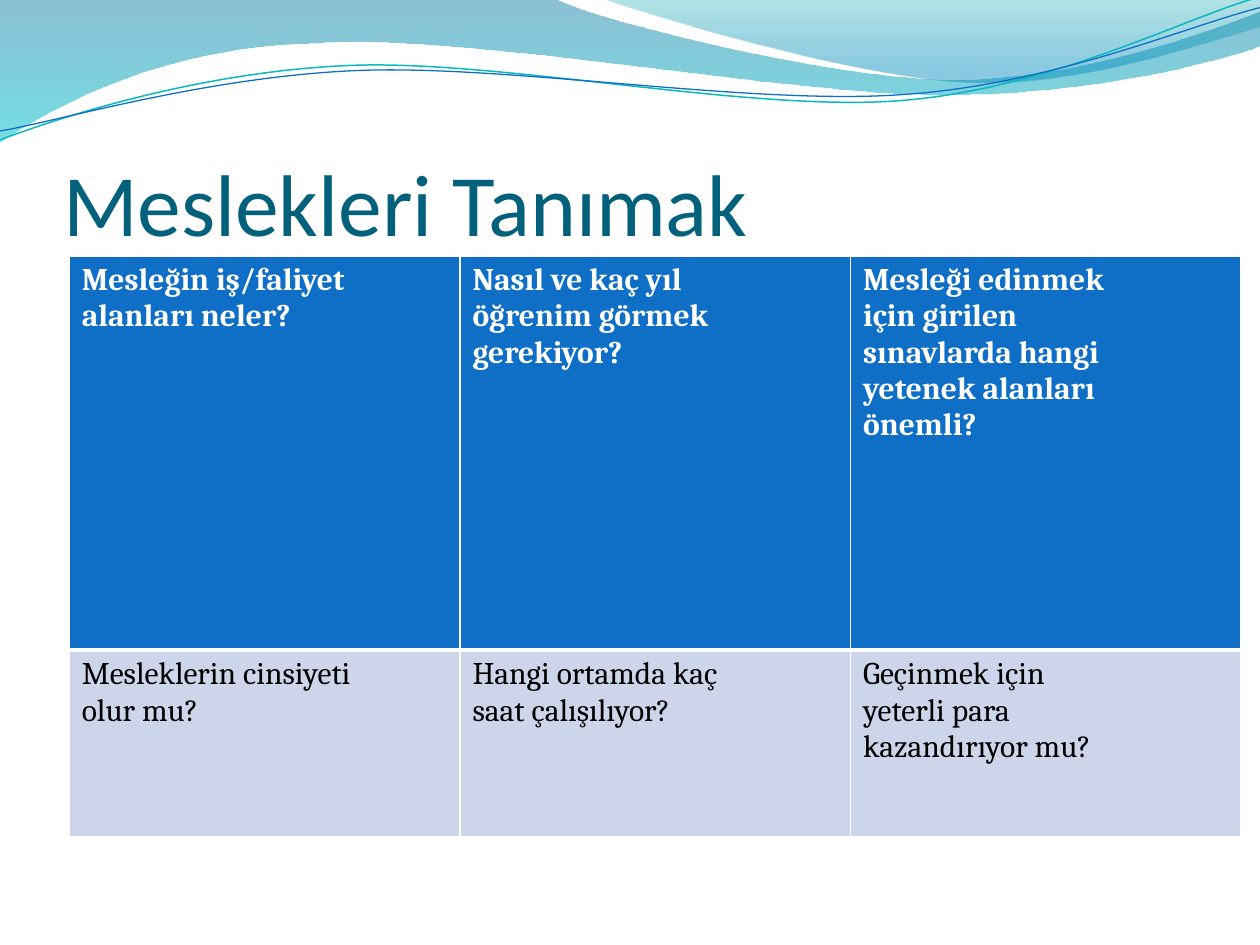
import math

from lxml import etree
from pptx import Presentation, util as u
from pptx.dml.color import RGBColor
from pptx.enum import text
from pptx.oxml import ns

COLORS = {
    "title": "04617B", "header": "0F6FC6", "body": "CCD5EA",
    "white": "FFFFFF", "black": "000000", "teal": "0AB8BF", "blue": "0F6FC6",
    "deep": "0074A1", "cyan": "00C6CF", "green": "00A1A9", "sky": "008BBF",
}
TILT = -2.7
BANDS = [
    ([(0, 0), (4.4, -0.01),
      (4.76, 0.17, 6.64, 0.63, 7.58, 0.63), (8.53, 0.63, 9.58, 0.26, 10, 0.09),
      (10.01, 0.36),
      (9.83, 0.44, 8.7, 0.76, 7.46, 0.75), (6.22, 0.75, 3.82, 0.28, 2.57, 0.34),
      (1.29, 0.36, 0.46, 0.83, -0.01, 1.13), (0, 0)],
     [(0, "deep", 45), (1, "cyan", 55)]),
    ([(4.79, -0.01),
      (5.09, 0.11, 6.82, 0.62, 7.69, 0.65), (8.56, 0.69, 9.61, 0.32, 10, 0.21),
      (10, 0), (4.79, -0.01)],
     [(0, "green", 30), (0.8, "sky", 45)]),
]
STRANDS = [
    ([(0, 1.11), (0.48, 0.93, 1.58, 0.57, 2.77, 0.52),
      (3.95, 0.47, 5.93, 0.89, 7.13, 0.8), (8.33, 0.71, 9.38, 0.15, 9.98, -0.02)],
     "teal", 0.85),
    ([(0, 1.04), (0.47, 0.96, 1.64, 0.61, 2.83, 0.56),
      (4.03, 0.51, 5.97, 0.84, 7.17, 0.75), (8.36, 0.67, 9.41, 0.21, 10, 0.06)],
     "blue", 0.75),
]
QUESTIONS = [
    ["Mesleğin iş/faliyet\nalanları neler?",
     "Nasıl ve kaç yıl\nöğrenim görmek\ngerekiyor?",
     "Mesleği edinmek\niçin girilen\nsınavlarda hangi\nyetenek alanları\nönemli?"],
    ["Mesleklerin cinsiyeti\nolur mu?",
     "Hangi ortamda kaç\nsaat çalışılıyor?",
     "Geçinmek için\nyeterli para\nkazandırıyor mu?"],
]


def rgb(name):
    """Return the named colour."""
    return RGBColor.from_string(COLORS[name])


def apply(obj, values):
    """Set each attribute of obj from a dict."""
    for name, value in values.items():
        setattr(obj, name, value)


def turn(x, y, degrees, center=(4.99, 0.58)):
    """Turn a point clockwise about the center of the strands."""
    a, dx, dy = math.radians(degrees), x - center[0], y - center[1]
    return (center[0] + dx * math.cos(a) - dy * math.sin(a),
            center[1] + dx * math.sin(a) + dy * math.cos(a))


def add_outline(s, left, top, segments, close=False, tilt=0):
    """Draw a freeform of lines and cubic curves, tilted by some degrees."""
    curves = []
    for seg in segments:
        points = [turn(x, y, -tilt) for x, y in zip(seg[::2], seg[1::2])]
        curves.append([(left + u.Inches(x), top + u.Inches(y)) for x, y in points])
    builder = s.shapes.build_freeform(*curves[0][-1])
    builder.add_line_segments([points[-1] for points in curves[1:]], close=close)
    sp = builder.convert_to_shape()
    for line, points in zip(list(sp._element.iter(ns.qn("a:lnTo"))), curves[1:]):
        if len(points) == 3:
            line.tag = ns.qn("a:cubicBezTo")
            for i, (x, y) in enumerate(points[:2]):
                pt = etree.Element(ns.qn("a:pt"), x=str(x - sp.left), y=str(y - sp.top))
                line.insert(i, pt)
    sp.rotation = tilt
    sp.shadow.inherit = False
    return sp


def add_waves(s, left, top):
    """Draw the gradient bands and thin strands along the top."""
    for segments, stops in BANDS:
        sp = add_outline(s, left, top, segments, close=True)
        sp.line.fill.background()
        sp.fill.gradient()
        sp.fill.gradient_angle = 270
        for stop, (position, color, _) in zip(sp.fill.gradient_stops, stops):
            stop.position = position
            stop.color.rgb = rgb(color)
        clrs = sp._element.spPr.iter(ns.qn("a:srgbClr"))
        for clr, (_, _, opacity) in zip(clrs, stops):
            etree.SubElement(clr, ns.qn("a:alpha"), val=str(opacity * 1000))
    for segments, color, width in STRANDS:
        sp = add_outline(s, left, top, segments, tilt=TILT)
        sp.fill.background()
        sp.line.color.rgb = rgb(color)
        sp.line.width = u.Pt(width)


def add_title(s, left, top, width, height):
    """Place and format the title placeholder."""
    sp = s.shapes.title
    apply(sp, {"left": left, "top": top, "width": width, "height": height})
    tf = sp.text_frame
    tf.text = "Meslekleri Tanımak"
    apply(tf, {"auto_size": text.MSO_AUTO_SIZE.NONE, "word_wrap": True,
               "vertical_anchor": text.MSO_ANCHOR.BOTTOM, "margin_left": 0,
               "margin_right": 0, "margin_top": u.Inches(0.05), "margin_bottom": 0})
    p = tf.paragraphs[0]
    p.alignment = text.PP_ALIGN.LEFT
    font = p.runs[0].font
    apply(font, {"name": "Calibri", "size": u.Pt(50)})
    font.color.rgb = rgb("title")


def set_borders(cell, widths):
    """Give a cell white borders, with widths in points by side."""
    tc_pr = cell._tc.get_or_add_tcPr()
    for i, (side, width) in enumerate(widths.items()):
        ln = etree.Element(ns.qn(f"a:ln{side}"), w=str(u.Pt(width)))
        fill = etree.SubElement(ln, ns.qn("a:solidFill"))
        etree.SubElement(fill, ns.qn("a:srgbClr"), val=COLORS["white"])
        tc_pr.insert(i, ln)


def add_questions(s, left, top, width, heights):
    """Draw the table of questions about professions."""
    rows, cols = len(QUESTIONS), len(QUESTIONS[0])
    table = s.shapes.add_table(rows, cols, left, top, width, sum(heights)).table
    table.horz_banding = False
    looks = [("header", "white", True, {"L": 1, "R": 1, "T": 1, "B": 3}),
             ("body", "black", False, {"L": 1, "R": 1, "T": 3, "B": 1})]
    for r, (fill, color, bold, borders) in enumerate(looks):
        table.rows[r].height = heights[r]
        for c, question in enumerate(QUESTIONS[r]):
            cell = table.cell(r, c)
            cell.text = question
            cell.fill.solid()
            cell.fill.fore_color.rgb = rgb(fill)
            set_borders(cell, borders)
            for p in cell.text_frame.paragraphs:
                font = p.runs[0].font
                apply(font, {"name": "Cambria", "size": u.Pt(18), "bold": bold})
                font.color.rgb = rgb(color)


def main():
    """Build the slide and save it."""
    prs = Presentation()
    apply(prs, {"slide_width": u.Inches(10), "slide_height": u.Inches(7.5)})
    s = prs.slides.add_slide(prs.slide_layouts[5])
    add_waves(s, 0, 0)
    add_title(s, u.Inches(0.5), u.Inches(0.77), u.Inches(9.08), u.Inches(1.25))
    add_questions(s, u.Inches(0.55), u.Inches(2.03), u.Inches(9.3),
                  [u.Inches(3.13), u.Inches(1.48)])
    prs.save("out.pptx")


if __name__ == "__main__":
    main()
